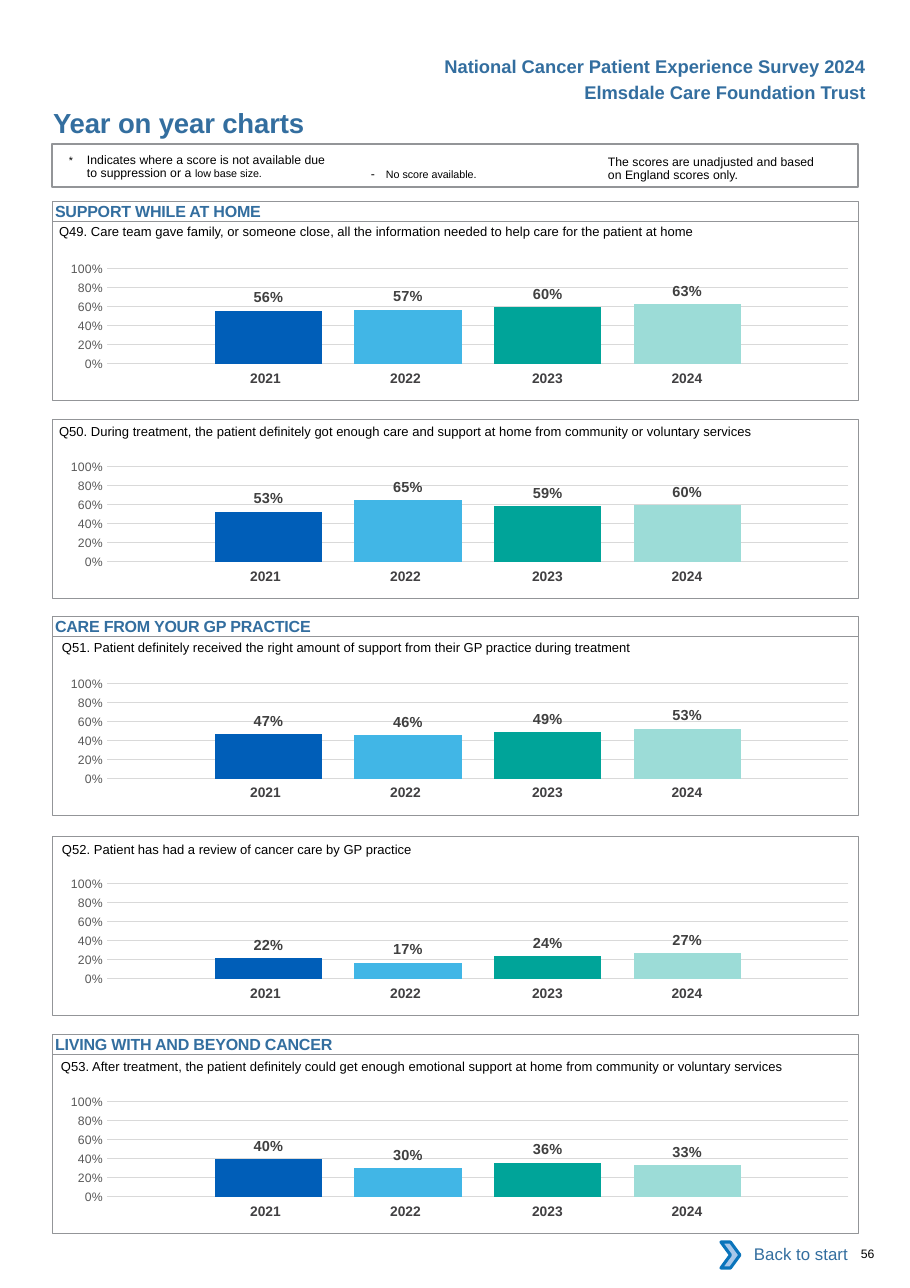
from lxml import etree
from pptx import Presentation
from pptx.chart.data import CategoryChartData
from pptx.dml.color import RGBColor
from pptx.enum.chart import XL_CHART_TYPE as CT, XL_LABEL_POSITION as LP, XL_TICK_MARK as TM
from pptx.enum.shapes import MSO_SHAPE as SHAPE
from pptx.enum.text import MSO_ANCHOR as ANCHOR, MSO_AUTO_SIZE as AUTO, PP_ALIGN as ALIGN
from pptx.oxml.ns import qn
from pptx.util import Emu, Pt

SCALE = 914400 / 110.2
BLUE, GREY, BLACK = "336E9F", "939598", "000000"
LEFT, WIDTH, PANEL_H = 52, 806, 179
YEARS = {"2021": "005EB8", "2022": "41B6E6", "2023": "00A499", "2024": "9CDCD7"}
NO_TABLE_STYLE = "{2D5ABB26-0587-4C30-8999-92F81FD0307C}"

# panel top, question offset (x, y), section heading, question, yearly scores
PANELS = [
    (221, (7, 2), "SUPPORT WHILE AT HOME",
     "Q49. Care team gave family, or someone close, all the information needed "
     "to help care for the patient at home", (0.56, 0.57, 0.6, 0.63)),
    (419, (7, 4), None,
     "Q50. During treatment, the patient definitely got enough care and support "
     "at home from community or voluntary services", (0.53, 0.65, 0.59, 0.6)),
    (636, (10, 3), "CARE FROM YOUR GP PRACTICE",
     "Q51. Patient definitely received the right amount of support from their "
     "GP practice during treatment", (0.47, 0.46, 0.49, 0.53)),
    (836, (10, 5), None,
     "Q52. Patient has had a review of cancer care by GP practice",
     (0.22, 0.17, 0.24, 0.27)),
    (1054, (9, 4), "LIVING WITH AND BEYOND CANCER",
     "Q53. After treatment, the patient definitely could get enough emotional "
     "support at home from community or voluntary services",
     (0.4, 0.3, 0.36, 0.33)),
]


def px(n):
    return Emu(round(n * SCALE))


def box(*lengths):
    return [px(n) for n in lengths]


def rgb(color):
    return RGBColor.from_string(color)


def style(font, size, color, bold=False):
    for name, value in {"name": "Arial", "size": Pt(size), "bold": bold}.items():
        setattr(font, name, value)
    font.color.rgb = rgb(color)


def write(tf, lines, size, color=BLACK, bold=False, align=ALIGN.LEFT,
          anchor=ANCHOR.TOP, insets=(0, 0, 0, 0), spacing=None, hang=0, tracking=0):
    """Fill a frame; each line is a list of (text, size) runs or one string."""
    sides = ("margin_left", "margin_top", "margin_right", "margin_bottom")
    frame = {"word_wrap": True, "auto_size": AUTO.NONE, "vertical_anchor": anchor}
    for name, value in {**frame, **dict(zip(sides, box(*insets)))}.items():
        setattr(tf, name, value)
    for i, line in enumerate(lines):
        p = tf.add_paragraph() if i else tf.paragraphs[0]
        p.alignment = align
        p.line_spacing = spacing
        p.space_before = Pt(2.5 if i else 0)
        if hang:
            pPr = p._p.get_or_add_pPr()
            pPr.set("marL", str(px(hang)))
            pPr.set("indent", str(-px(hang)))
        for text, run_size in [(line, size)] if isinstance(line, str) else line:
            r = p.add_run()
            r.text = text
            style(r.font, run_size, color, bold)
            if tracking:
                r._r.get_or_add_rPr().set("spc", str(tracking))


def add_text(s, at, lines, size, **look):
    write(s.shapes.add_textbox(*box(*at)).text_frame, lines, size, **look)


def add_frame(s, at, line_width=0.5):
    sp = s.shapes.add_shape(SHAPE.RECTANGLE, *box(*at))
    sp.shadow.inherit = False
    sp.fill.background()
    sp.line.color.rgb = rgb(GREY)
    sp.line.width = Pt(line_width)
    return sp


def add_header(s):
    add_text(s, (400, 55, 466, 48),
             ["National Cancer Patient Experience Survey 2024",
              "Elmsdale Care Foundation Trust"],
             12, color=BLUE, bold=True, align=ALIGN.RIGHT)
    title = s.shapes.title
    title.left, title.top, title.width, title.height = box(53, 106, 496, 33)
    write(title.text_frame, ["Year on year charts"], 18, color=BLUE, bold=True,
          tracking=-10)


def add_key(s, x, y):
    add_frame(s, (x, y, WIDTH, 43), 0.75)
    add_text(s, (x + 17, y + 11, 262, 28),
             [[("*\t", 7), ("Indicates where a score is not available due "
                            "to suppression or a ", 8), ("low base size.", 7)]],
             8, spacing=Pt(8.1), hang=18)
    add_text(s, (x + 319, y + 22, 180, 16),
             [[("-\t", 8), ("No score available.", 7)]], 8, hang=15)
    add_text(s, (x + 556, y + 13, 221, 28),
             ["The scores are unadjusted and based on England scores only."],
             8, spacing=Pt(8.1))


def place_plot(chart, *fractions):
    area = chart._chartSpace.chart.plotArea
    for old in area.findall(qn("c:layout")):
        area.remove(old)
    layout = etree.Element(qn("c:layout"))
    manual = etree.SubElement(layout, qn("c:manualLayout"))
    values = dict(layoutTarget="inner", xMode="edge", yMode="edge")
    values.update(zip("xywh", fractions))
    for name, value in values.items():
        etree.SubElement(manual, qn("c:" + name)).set("val", str(value))
    area.insert(0, layout)


def add_score_chart(s, at, scores):
    data = CategoryChartData(number_format="0%")
    data.categories = ["1"]
    for year, score in zip(YEARS, scores):
        data.add_series(year, [score])
    chart = s.shapes.add_chart(CT.COLUMN_CLUSTERED, *box(*at), data).chart
    chart.has_legend = chart.has_title = False
    chart.font.name, chart.font.size = "Calibri", Pt(10)
    place_plot(chart, 0.08, 0.14, 0.92, 0.67)
    chart.category_axis.visible = False

    axis = chart.value_axis
    for name, value in {"minimum_scale": 0, "maximum_scale": 1, "major_unit": 0.2,
                        "major_tick_mark": TM.NONE, "minor_tick_mark": TM.NONE,
                        "has_major_gridlines": True}.items():
        setattr(axis, name, value)
    axis.format.line.fill.background()
    grid = axis.major_gridlines.format.line
    grid.color.rgb, grid.width = rgb("D9D9D9"), Pt(0.75)
    ticks = axis.tick_labels
    ticks.number_format, ticks.number_format_is_linked = "0%", False
    style(ticks.font, 8, "595959")

    plot = chart.plots[0]
    plot.gap_width, plot.overlap, plot.vary_by_categories = 200, -30, False
    for series, color in zip(plot.series, YEARS.values()):
        series.format.fill.solid()
        series.format.fill.fore_color.rgb = rgb(color)
        labels = series.data_labels
        for name, value in {"show_value": True, "position": LP.OUTSIDE_END,
                            "number_format": "0%",
                            "number_format_is_linked": False}.items():
            setattr(labels, name, value)
        style(labels.font, 9.5, "404040", True)


def add_year_row(s, x, y):
    widths, right_insets = (140, 140, 148, 140), (0, 0, 4, 13)
    frame = s.shapes.add_table(1, len(YEARS), *box(x, y, sum(widths), 30))
    frame.element.find(".//" + qn("a:tableStyleId")).text = NO_TABLE_STYLE
    table = frame.table
    table.first_row = table.horz_banding = False
    for i, year in enumerate(YEARS):
        table.columns[i].width = px(widths[i])
        cell = table.cell(0, i)
        cell.fill.background()
        cell.margin_left, cell.margin_right = box(11, right_insets[i])
        p = cell.text_frame.paragraphs[0]
        p.alignment = ALIGN.CENTER
        r = p.add_run()
        r.text = year
        style(r.font, 9, "414042", True)


def add_panel(s, x, y, offset, heading, question, scores):
    add_score_chart(s, (x - 9, y + 28, WIDTH, 142), scores)
    add_year_row(s, x + 138, y + 144)
    add_frame(s, (x, y, WIDTH, PANEL_H))
    if heading:
        bar = add_frame(s, (x, y - 20, WIDTH, 20))
        write(bar.text_frame, [heading], 10.5, color=BLUE, bold=True,
              anchor=ANCHOR.MIDDLE, insets=(3, 1, 0, 0), tracking=-10)
    dx, dy = offset
    add_text(s, (x + dx, y + dy, WIDTH - 2 * dx, 16), [question], 8.5)


def add_footer(s, x, y):
    sp = s.shapes.add_shape(SHAPE.CHEVRON, *box(x, y, 19, 26))
    sp.shadow.inherit = False
    sp.fill.solid()
    sp.fill.fore_color.rgb = rgb("A8C7E9")
    sp.line.color.rgb, sp.line.width = rgb("0A74BB"), Pt(2)
    add_text(s, (x + 22, y - 11, 105, 46), ["Back to start"], 11, color=BLUE,
             align=ALIGN.RIGHT, anchor=ANCHOR.MIDDLE)
    add_text(s, (x + 140, y + 4, 40, 15), ["56"], 8)


def main():
    prs = Presentation()
    prs.slide_width, prs.slide_height = box(910, 1288)
    s = prs.slides.add_slide(prs.slide_layouts[5])
    add_header(s)
    add_key(s, LEFT, 144)
    for top, *parts in PANELS:
        add_panel(s, LEFT, top, *parts)
    add_footer(s, 721, 1242)
    prs.save("out.pptx")


if __name__ == "__main__":
    main()
